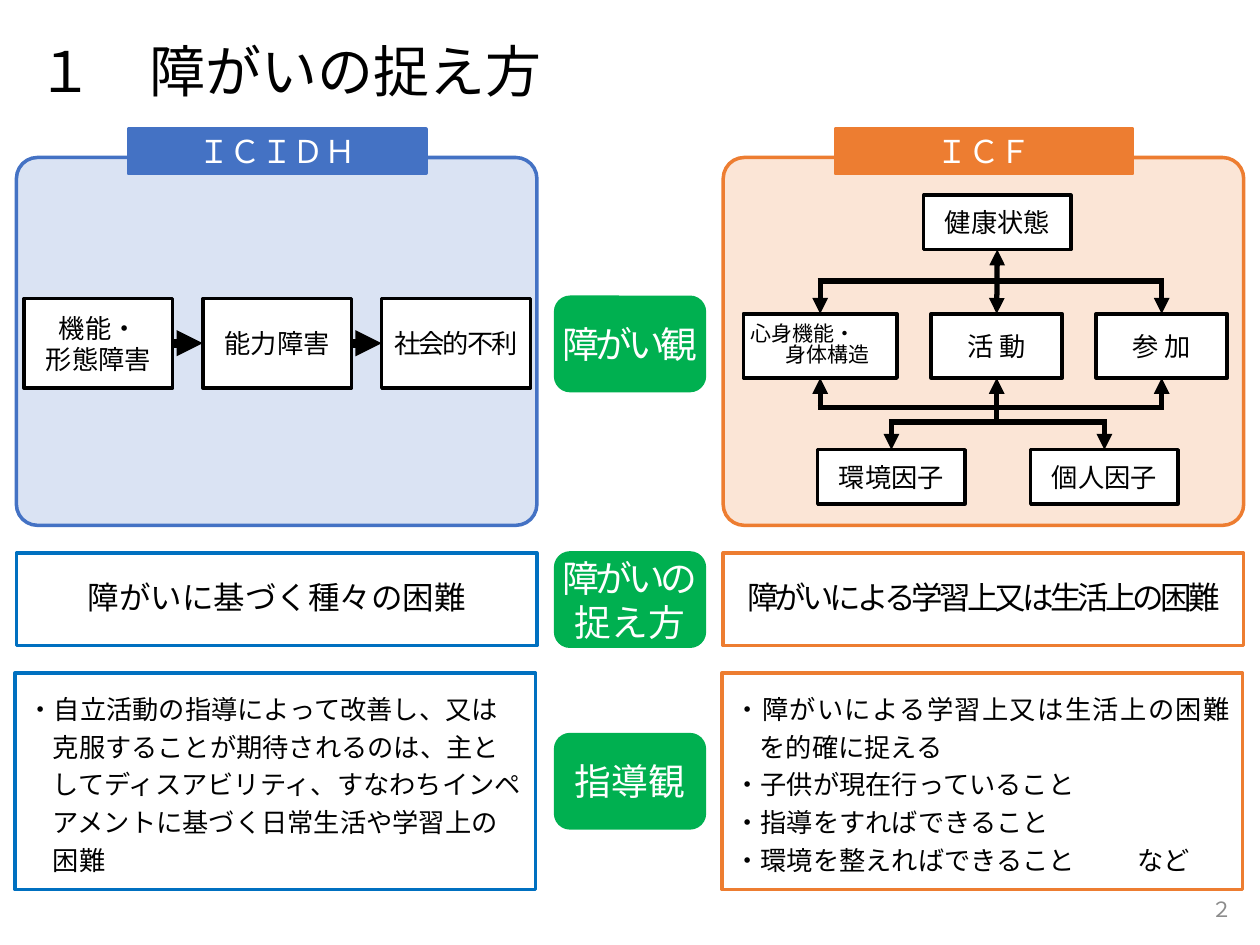
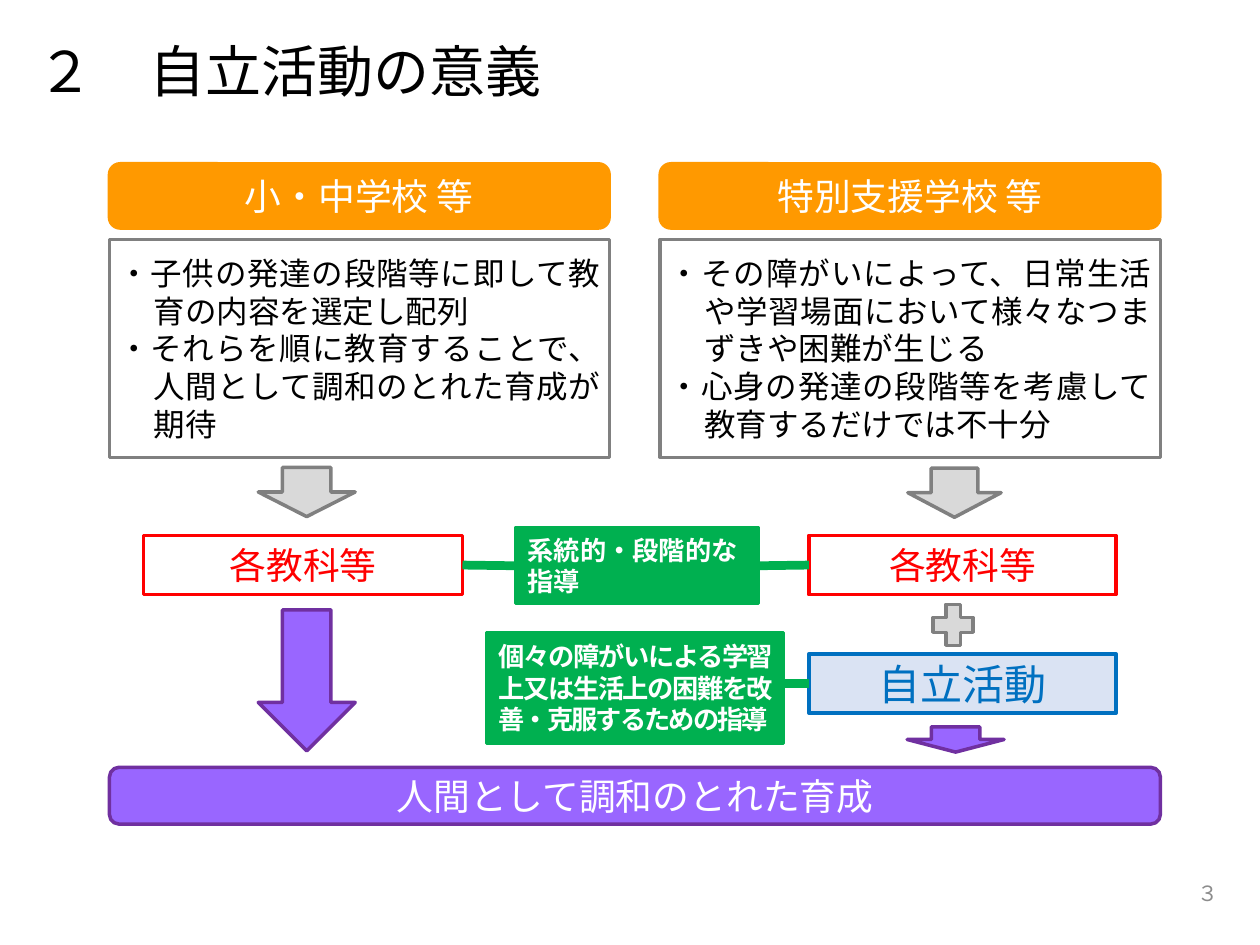
"""Build two slides on views of disability and the meaning of self-reliance activities."""
from dataclasses import dataclass

from lxml import etree
from pptx import Presentation
from pptx.dml.color import RGBColor
from pptx.enum.shapes import MSO_CONNECTOR, MSO_SHAPE
from pptx.enum.text import MSO_ANCHOR, MSO_AUTO_SIZE, PP_ALIGN
from pptx.oxml.ns import qn
from pptx.util import Pt

RECTANGLE = MSO_SHAPE.RECTANGLE
ROUNDED = MSO_SHAPE.ROUNDED_RECTANGLE
DOWN_ARROW = MSO_SHAPE.DOWN_ARROW
PLUS = MSO_SHAPE.MATH_PLUS
STRAIGHT = MSO_CONNECTOR.STRAIGHT
MIDDLE = MSO_ANCHOR.MIDDLE
LEFT, CENTER, RIGHT, JUSTIFY = PP_ALIGN.LEFT, PP_ALIGN.CENTER, PP_ALIGN.RIGHT, PP_ALIGN.JUSTIFY
TITLE, TEXT_BOX = "title", "text box"
TOP_SIDE, LEFT_SIDE, BOTTOM_SIDE, RIGHT_SIDE = range(4)


@dataclass(frozen=True)
class Theme:
    font: str = "Noto Sans CJK JP"
    black: str = "000000"
    white: str = "FFFFFF"
    blue: str = "4472C4"
    pale_blue: str = "DAE3F3"
    strong_blue: str = "0070C0"
    orange: str = "ED7D31"
    pale_orange: str = "FBE5D6"
    amber: str = "FF9900"
    green: str = "00B050"
    red: str = "FF0000"
    violet: str = "9966FF"
    purple: str = "7030A0"
    gray: str = "808080"
    pale_gray: str = "D9D9D9"
    number_gray: str = "8C8C8C"
    title: int = 32
    feature: int = 24
    heading: int = 21
    body: int = 18
    label: int = 15
    small: int = 12


THEME = Theme()


def place(slide, kind, bounds, text="", fill=None, line=None, size=THEME.label,
          color=THEME.black, align=CENTER, bold=False, spacing=0, leading=None,
          hanging=0, insets=(7.2, 3.6), adjustment=None):
    """Place a shape, text box or title and write its paragraphs."""
    bounds = [Pt(length) for length in bounds]
    if kind == TITLE:
        shape = slide.shapes.title
        shape.left, shape.top, shape.width, shape.height = bounds
    elif kind == TEXT_BOX:
        shape = slide.shapes.add_textbox(*bounds)
    else:
        shape = slide.shapes.add_shape(kind, *bounds)
        shape.shadow.inherit = False
        shape.fill.solid()
        shape.fill.fore_color.rgb = RGBColor.from_string(fill)
        shape.line.color.rgb = RGBColor.from_string(line)
        shape.line.width = Pt(2)
    if adjustment is not None:
        shape.adjustments[0] = adjustment
    if not text:
        return shape
    frame = shape.text_frame
    frame.word_wrap = True
    frame.auto_size = MSO_AUTO_SIZE.NONE
    frame.vertical_anchor = MIDDLE
    frame.margin_left = frame.margin_right = Pt(insets[0])
    frame.margin_top = frame.margin_bottom = Pt(insets[1])
    for index, content in enumerate(text.split("\n")):
        paragraph = frame.add_paragraph() if index else frame.paragraphs[0]
        paragraph.alignment = align
        if leading:
            paragraph.line_spacing = leading
        if hanging:
            properties = paragraph._p.get_or_add_pPr()
            properties.set("marL", str(Pt(hanging)))
            properties.set("indent", str(Pt(-hanging)))
        run = paragraph.add_run()
        run.text = content
        run.font.name = THEME.font
        run.font.size = Pt(size)
        run.font.bold = bold
        run.font.color.rgb = RGBColor.from_string(color)
        properties = run._r.get_or_add_rPr()
        properties.set("lang", "ja-JP")
        properties.set("spc", str(round(spacing * 100)))
        etree.SubElement(properties, qn("a:ea")).set("typeface", THEME.font)
    return shape


def connect(slide, start=(0, 0), end=(0, 0), begin_join=None, end_join=None,
            color=THEME.black, width=3, head=False, tail=False):
    """Draw a straight connector, joined to shapes where asked."""
    connector = slide.shapes.add_connector(STRAIGHT, *[Pt(value) for value in (*start, *end)])
    if begin_join:
        connector.begin_connect(*begin_join)
    if end_join:
        connector.end_connect(*end_join)
    connector.line.color.rgb = RGBColor.from_string(color)
    connector.line.width = Pt(width)
    outline = connector.line._get_or_add_ln()
    for tag, wanted in (("a:headEnd", head), ("a:tailEnd", tail)):
        if wanted:
            etree.SubElement(outline, qn(tag)).set("type", "triangle")
    etree.SubElement(connector._element.spPr, qn("a:effectLst"))


presentation = Presentation()
presentation.slide_width, presentation.slide_height = Pt(720), Pt(540)

slides = []
for title, number, number_left, number_top in (
        ("１　障がいの捉え方", "２", 549.4, 505.4),
        ("２　自立活動の意義", "３", 541.4, 496)):
    slide = presentation.slides.add_slide(presentation.slide_layouts[5])
    place(slide, TITLE, (14.4, 14.4, 720, 51), title, size=THEME.title, align=LEFT)
    place(slide, TEXT_BOX, (number_left, number_top, 162, 28.8), number,
          size=THEME.small, color=THEME.number_gray, align=RIGHT)
    slides.append(slide)
views_slide, meaning_slide = slides

model_columns = (
    (9.4, "ＩＣＩＤＨ", THEME.pale_blue, THEME.blue, THEME.strong_blue,
     "障がいに基づく種々の困難", 0, LEFT,
     "・自立活動の指導によって改善し、又は克服することが期待されるのは、主として"
     "ディスアビリティ、すなわちインペアメントに基づく日常生活や学習上の困難"),
    (413.3, "ＩＣＦ", THEME.pale_orange, THEME.orange, THEME.orange,
     "障がいによる学習上又は生活上の困難", -2.2, JUSTIFY,
     "・障がいによる学習上又は生活上の困難を的確に捉える\n・子供が現在行っていること\n"
     "・指導をすればできること\n・環境を整えればできること\tなど"),
)
for left, model, pale, strong, border, difficulty, spacing, align, guidance in model_columns:
    place(views_slide, ROUNDED, (left, 90, 297.4, 210.2), fill=pale, line=strong, adjustment=0.057)
    place(views_slide, RECTANGLE, (left + 64, 73.8, 170, 25.2), model, strong, strong,
          THEME.body, THEME.white)
    place(views_slide, RECTANGLE, (left, 316, 297.4, 53), difficulty, THEME.white, border,
          THEME.body, spacing=spacing, leading=0.88)
    guidance_box = place(views_slide, RECTANGLE, (left - 0.7, 384.5, 297.4, 123.8), guidance,
                         THEME.white, border, align=align, leading=1.2, hanging=14.4)

last_properties = guidance_box.text_frame.paragraphs[-1]._p.get_or_add_pPr()
tab = etree.SubElement(etree.SubElement(last_properties, qn("a:tabLst")), qn("a:tab"))
tab.set("pos", str(Pt(234)))
tab.set("algn", "l")

for top, viewpoint, spacing in ((169.9, "障がい観", -2.2), (316, "障がいの\n捉え方", -2.2),
                                (419.8, "指導観", 0)):
    viewpoint_box = place(views_slide, ROUNDED, (317.5, top, 85, 53.3), viewpoint, THEME.green,
                          THEME.green, THEME.heading, THEME.white, spacing=spacing,
                          insets=(0, 0), adjustment=0.154)
    for paragraph in viewpoint_box.text_frame.paragraphs[1:]:
        paragraph.runs[0]._r.get_or_add_rPr().set("spc", "0")

stages = [
    place(views_slide, RECTANGLE, (13.7 + 102.2 * index, 170.6, 85, 51.1), stage,
          THEME.white, THEME.black, spacing=spacing)
    for index, (stage, spacing) in enumerate(
        (("機能・\n形態障害", 0), ("能力障害", 0), ("社会的不利", -1.1)))
]
for before, after in zip(stages, stages[1:]):
    connect(views_slide, begin_join=(before, RIGHT_SIDE), end_join=(after, LEFT_SIDE),
            width=5, tail=True)

health, activity, participation, environment, personal = [
    place(views_slide, RECTANGLE, bounds, factor, THEME.white, THEME.black)
    for factor, bounds in (
        ("健康状態", (527.8, 111.6, 84.2, 31)),
        ("活 動", (532.1, 179.3, 74.9, 36.7)),
        ("参 加", (626.4, 179.3, 74.9, 36.7)),
        ("環境因子", (467.3, 257, 84.2, 31)),
        ("個人因子", (589, 257, 84.2, 31)))
]
body_functions = place(views_slide, RECTANGLE, (424.8, 179.3, 87.8, 36.7), "心身機能・\n身体構造",
                       THEME.white, THEME.black, THEME.small, align=LEFT, leading=Pt(12),
                       insets=(0, 0))
for paragraph, indent in zip(body_functions.text_frame.paragraphs, (4, 24)):
    paragraph._p.get_or_add_pPr().set("marL", str(Pt(indent)))

connect(views_slide, begin_join=(health, BOTTOM_SIDE), end_join=(activity, TOP_SIDE),
        head=True, tail=True)
for first, last, side, rail in ((body_functions, participation, TOP_SIDE, 160.6),
                                (body_functions, participation, BOTTOM_SIDE, 232.8),
                                (environment, personal, TOP_SIDE, 241.2)):
    centers = [box.left.pt + box.width.pt / 2 for box in (first, last)]
    connect(views_slide, (centers[0] - 1.5, rail), (centers[1] + 1.5, rail))
    for box, center in zip((first, last), centers):
        connect(views_slide, end=(center, rail), begin_join=(box, side), head=True)
connect(views_slide, end=(activity.left.pt + activity.width.pt / 2, 241.2),
        begin_join=(activity, BOTTOM_SIDE), head=True)

school_columns = (
    (62.6, "小・中学校 等", (147.6, 267.1, 55.4, 28.1), (147.6, 348.5, 55.4, 80.6),
     "・子供の発達の段階等に即して教育の内容を選定し配列\n"
     "・それらを順に教育することで、人間として調和のとれた育成が期待"),
    (377.3, "特別支援学校 等", (518.8, 267.5, 53.3, 28.1), (518.4, 415.4, 55.4, 14.4),
     "・その障がいによって、日常生活や学習場面において様々なつまずきや困難が生じる\n"
     "・心身の発達の段階等を考慮して教育するだけでは不十分"),
)
for left, school, gray_arrow, violet_arrow, description in school_columns:
    place(meaning_slide, ROUNDED, (left, 93.6, 285.5, 36.7), school, THEME.amber, THEME.amber,
          THEME.heading, THEME.white)
    place(meaning_slide, RECTANGLE, (left, 136.8, 285.8, 124.6), description, THEME.white,
          THEME.gray, THEME.body, align=JUSTIFY, hanging=20.2, insets=(5, 2.9))
    place(meaning_slide, DOWN_ARROW, gray_arrow, fill=THEME.pale_gray, line=THEME.gray)
    place(meaning_slide, DOWN_ARROW, violet_arrow, fill=THEME.violet, line=THEME.purple)

place(meaning_slide, ROUNDED, (62.6, 438.5, 600.5, 32.4), "人間として調和のとれた育成",
      THEME.violet, THEME.purple, THEME.heading, THEME.white)
place(meaning_slide, PLUS, (529.2, 341.3, 31, 31.7), fill=THEME.pale_gray, line=THEME.gray,
      adjustment=0.273)
regular_subjects, special_subjects = [
    place(meaning_slide, RECTANGLE, (left, 306, width, 33.8), "各教科等", THEME.white, THEME.red,
          THEME.heading, THEME.red)
    for left, width in ((82.1, 182.2), (462.2, 175.7))
]
self_reliance = place(meaning_slide, RECTANGLE, (462.2, 373.7, 175.7, 33.8), "自立活動",
                      THEME.pale_blue, THEME.strong_blue, THEME.feature, THEME.strong_blue)
systematic = place(meaning_slide, RECTANGLE, (294.5, 301.7, 139, 43.2), "系統的・段階的な指導",
                   THEME.green, THEME.green, color=THEME.white, align=LEFT, bold=True)
place(meaning_slide, RECTANGLE, (277.9, 361.4, 169.9, 63.4),
      "個々の障がいによる学習上又は生活上の困難を改善・克服するための指導", THEME.green,
      THEME.green, color=THEME.white, align=JUSTIFY, bold=True, spacing=-1.1, leading=Pt(18))

connect(meaning_slide, begin_join=(regular_subjects, RIGHT_SIDE), end_join=(systematic, LEFT_SIDE),
        color=THEME.green, width=5)
connect(meaning_slide, begin_join=(systematic, RIGHT_SIDE),
        end_join=(special_subjects, LEFT_SIDE), color=THEME.green, width=5)
connect(meaning_slide, (447.8, 390.6), end_join=(self_reliance, LEFT_SIDE),
        color=THEME.green, width=5)

presentation.save("out.pptx")
